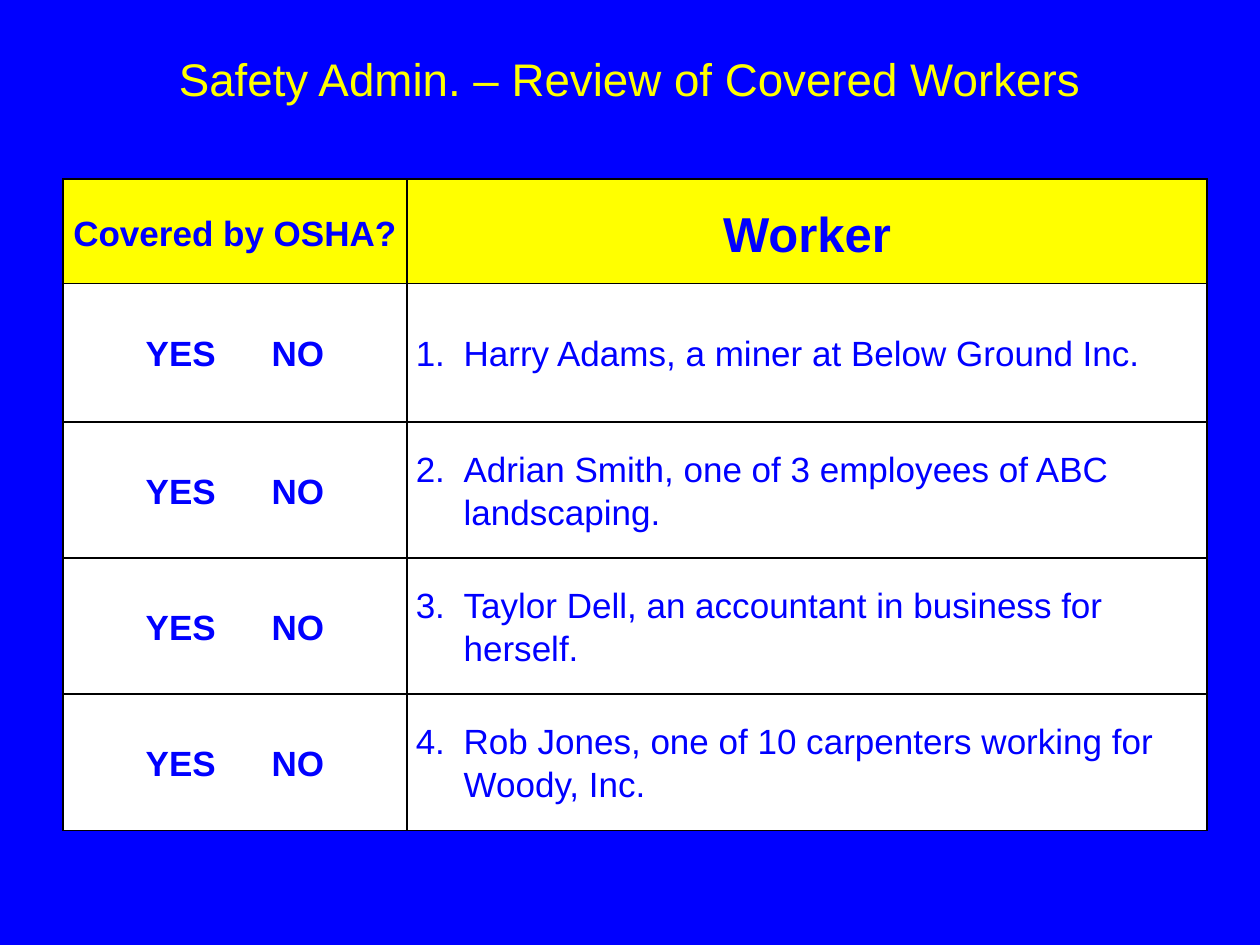
import dataclasses

import pptx
import pptx.dml.color
import pptx.enum.text
import pptx.oxml
import pptx.oxml.ns
import pptx.util

PP_ALIGN = pptx.enum.text.PP_ALIGN
ANCHOR = pptx.enum.text.MSO_ANCHOR


@dataclasses.dataclass(frozen=True)
class Theme:
    font: str = "Arial"
    blue: str = "0000FF"
    yellow: str = "FFFF00"
    white: str = "FFFFFF"
    black: str = "000000"
    title: float = 26.1
    heading: int = 28
    body: int = 20
    border: int = 1


class Deck:
    columns, rows = 20, 15

    def __init__(self, theme):
        self.theme = theme
        self.prs = pptx.Presentation()
        self.prs.slide_width = pptx.util.Inches(10)
        self.prs.slide_height = pptx.util.Inches(7.5)

    def x(self, n):
        return round(self.prs.slide_width * n / self.columns)

    def y(self, n):
        return round(self.prs.slide_height * n / self.rows)

    def add_slide(self, color):
        self.slide = self.prs.slides.add_slide(self.prs.slide_layouts[6])
        self.paint(self.slide.background.fill, color)

    def paint(self, fill, color):
        fill.solid()
        fill.fore_color.rgb = pptx.dml.color.RGBColor.from_string(color)

    def add_text(self, p, text, size, color, bold=False):
        r = p.add_run()
        r.text = text
        r.font.name = self.theme.font
        r.font.size = pptx.util.Pt(size)
        r.font.bold = bold
        r.font.color.rgb = pptx.dml.color.RGBColor.from_string(color)

    def title(self, text, left, top, width, height):
        box = self.slide.shapes.add_textbox(
            self.x(left), self.y(top), self.x(width), self.y(height))
        tf = box.text_frame
        tf.word_wrap = True
        tf.vertical_anchor = ANCHOR.TOP
        tf.margin_top = pptx.util.Inches(0.1)
        p = tf.paragraphs[0]
        p.alignment = PP_ALIGN.CENTER
        self.add_text(p, text, self.theme.title, self.theme.yellow)

    def table(self, left, top, widths, heights):
        table = self.slide.shapes.add_table(
            len(heights), len(widths), self.x(left), self.y(top),
            self.x(sum(widths)), self.y(sum(heights))).table
        table.horz_banding = False
        for column, width in zip(table.columns, widths):
            column.width = self.x(width)
        for row, height in zip(table.rows, heights):
            row.height = self.y(height)
        return table

    def borders(self, cell):
        tcPr = cell._tc.get_or_add_tcPr()
        width = pptx.util.Pt(self.theme.border)
        for side in ("lnL", "lnR", "lnT", "lnB"):
            tcPr.append(pptx.oxml.parse_xml(
                f'<a:{side} {pptx.oxml.ns.nsdecls("a")} w="{width}"><a:solidFill>'
                f'<a:srgbClr val="{self.theme.black}"/></a:solidFill></a:{side}>'))

    def cell(self, cell, text, size, fill, spacing, bold=True, number=None):
        cell.margin_left = cell.margin_right = pptx.util.Inches(0.07)
        cell.margin_top = cell.margin_bottom = 0
        cell.vertical_anchor = ANCHOR.MIDDLE
        self.borders(cell)
        self.paint(cell.fill, fill)
        p = cell.text_frame.paragraphs[0]
        p.line_spacing = spacing
        if number is None:
            p.alignment = PP_ALIGN.CENTER
        else:
            self.number(p, number)
        self.add_text(p, text, size, self.theme.blue, bold)

    def number(self, p, start):
        pPr = p._p.get_or_add_pPr()
        indent = pptx.util.Inches(0.38)
        pPr.set("marL", str(indent))
        pPr.set("indent", str(-indent))
        pPr.append(pptx.oxml.parse_xml(
            f'<a:buAutoNum {pptx.oxml.ns.nsdecls("a")} '
            f'type="arabicPeriod" startAt="{start}"/>'))


def main():
    theme = Theme()
    deck = Deck(theme)
    deck.add_slide(theme.blue)
    workers = [
        "Harry Adams, a miner at Below Ground Inc.",
        "Adrian Smith, one of 3 employees of ABC landscaping.",
        "Taylor Dell, an accountant in business for herself.",
        "Rob Jones, one of 10 carpenters working for Woody, Inc.",
    ]
    table = deck.table(1, 2.84, [5.46, 12.7], [1.66, 2.2] + [2.16] * 3)
    headings = [("Covered by OSHA?", theme.body), ("Worker", theme.heading)]
    for col, (text, size) in enumerate(headings):
        deck.cell(table.cell(0, col), text, size, theme.yellow, 1.15)
    for row, worker in enumerate(workers, 1):
        deck.cell(table.cell(row, 0), "YES\tNO", theme.body, theme.white, 1.1)
        deck.cell(table.cell(row, 1), worker, theme.body, theme.white, 1.1,
                  bold=False, number=row)
    deck.title("Safety Admin. – Review of Covered Workers", 1, 0.6, 18, 2.5)
    deck.prs.save("out.pptx")


if __name__ == "__main__":
    main()
